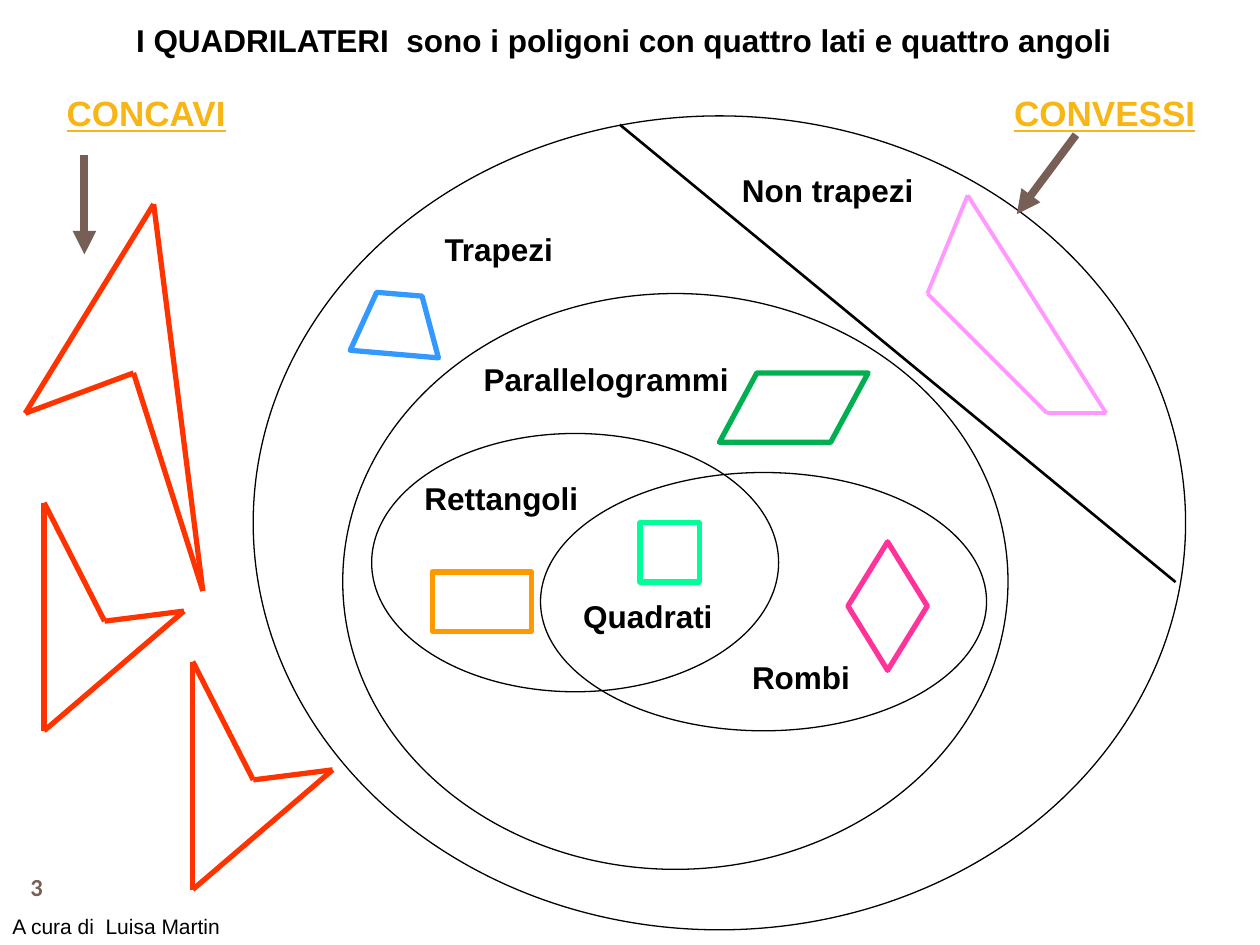
from itertools import pairwise

from lxml.etree import SubElement
from pptx import Presentation
from pptx.dml.color import RGBColor
from pptx.enum.shapes import MSO_CONNECTOR, MSO_SHAPE
from pptx.enum.text import MSO_ANCHOR, MSO_AUTO_SIZE, PP_ALIGN
from pptx.oxml.ns import qn
from pptx.util import Inches, Pt

COLORS = {
    "black": "000000", "gold": "F7B615", "brown": "775F55", "red": "FF3300",
    "lilac": "FF99FF", "pink": "FF3399", "orange": "FF9900", "mint": "00FF99",
    "green": "00B050", "blue": "3399FF",
}

# Lengths are inches; boxes are left, top, width, height.
TITLE = ("I QUADRILATERI  sono i poligoni con quattro lati e quattro angoli",
         (0.98, 0.12, 8.11, 0.4))

HEADING = {"size": Pt(20), "bold": True, "underline": True, "name": "Arial"}
LABEL = {"size": Pt(18), "bold": True, "name": "Arial"}
CREDIT = {"size": Pt(12), "name": "Arial"}
NUMBER = {"size": Pt(14), "bold": True, "name": "Calibri"}

TEXTS = [
    ("CONCAVI", (0.43, 0.68, 1.57, 0.43), HEADING, "gold"),
    ("CONVESSI", (7.95, 0.68, 1.77, 0.43), HEADING, "gold"),
    ("Non trapezi", (5.79, 1.31, 1.57, 0.4), LABEL, "black"),
    ("Trapezi", (3.43, 1.78, 1.26, 0.4), LABEL, "black"),
    ("Parallelogrammi", (3.74, 2.81, 2.36, 0.4), LABEL, "black"),
    ("Rettangoli", (3.27, 3.75, 1.57, 0.4), LABEL, "black"),
    ("Rombi", (5.87, 5.17, 1.02, 0.4), LABEL, "black"),
    ("Quadrati", (4.53, 4.69, 1.34, 0.4), LABEL, "black"),
    ("A cura di  Luisa Martin", (0, 7.2, 1.89, 0.3), CREDIT, "black"),
]
SLIDE_NUMBER = ("3", (0, 6.83, 0.58, 0.42), NUMBER, "brown")

SETS = [
    (2.01, 0.92, 7.4, 6.46),   # convessi
    (2.72, 2.33, 5.28, 4.57),  # parallelogrammi
    (2.95, 3.44, 3.23, 2.05),  # rettangoli
    (4.29, 3.75, 3.54, 2.05),  # rombi
]
EXAMPLES = [
    (MSO_SHAPE.DIAMOND, (6.73, 4.3, 0.63, 1.02), "pink"),
    (MSO_SHAPE.RECTANGLE, (3.43, 4.54, 0.79, 0.47), "orange"),
    (MSO_SHAPE.RECTANGLE, (5.08, 4.15, 0.47, 0.47), "mint"),
    (MSO_SHAPE.PARALLELOGRAM, (5.71, 2.96, 1.18, 0.55), "green"),
]
PARALLELOGRAM_SLANT = 0.54
TRAPEZOID = [(3.48, 2.84), (3.35, 2.35), (2.99, 2.32), (2.78, 2.78)]

LARGE_DART = [(1.22, 1.62), (0.2, 3.28), (1.06, 2.96), (1.61, 4.69)]
SMALL_DART = [(0, 0), (0.48, 0.94), (1.11, 0.86), (0, 1.81)]
SMALL_DART_ORIGINS = [(0.35, 3.99), (1.53, 5.25)]
KITE = [(8.78, 3.28), (7.68, 1.55), (7.36, 2.33), (8.31, 3.28)]
DIVIDER = [(4.92, 0.99), (9.33, 4.62)]
ARROWS = [[(8.54, 1.07), (8.07, 1.7)], [(0.67, 1.23), (0.67, 2.02)]]


def color(name):
    return RGBColor.from_string(COLORS[name])


def inches(values):
    return [Inches(value) for value in values]


def outline(shape, color_name, width):
    shape.shadow.inherit = False
    shape.fill.background()
    shape.line.color.rgb = color(color_name)
    shape.line.width = Pt(width)


def add_shape(slide, kind, box, color_name, width):
    shape = slide.shapes.add_shape(kind, *inches(box))
    outline(shape, color_name, width)
    return shape


def add_line(slide, start, end, color_name, width, arrow=False):
    line = slide.shapes.add_connector(
        MSO_CONNECTOR.STRAIGHT, *inches(start), *inches(end))
    line.line.color.rgb = color(color_name)
    line.line.width = Pt(width)
    properties = line.line._get_or_add_ln()
    if arrow:
        SubElement(properties, qn("a:tailEnd"), type="triangle")
    SubElement(properties.getparent(), qn("a:effectLst"))


def add_sides(slide, points, color_name, width):
    """Draw a polygon as one separate line per side."""
    for start, end in pairwise(points + points[:1]):
        add_line(slide, start, end, color_name, width)


def write(shape, text, font_format, color_name, align=PP_ALIGN.LEFT,
          anchor=MSO_ANCHOR.TOP, auto_size=MSO_AUTO_SIZE.SHAPE_TO_FIT_TEXT):
    frame = shape.text_frame
    frame.text = text
    frame.word_wrap = True
    frame.auto_size = auto_size
    frame.vertical_anchor = anchor
    paragraph = frame.paragraphs[0]
    paragraph.alignment = align
    font = paragraph.runs[0].font
    for name, value in font_format.items():
        setattr(font, name, value)
    font.color.rgb = color(color_name)


def add_text(slide, text, box, font_format, color_name, **layout):
    shape = slide.shapes.add_textbox(*inches(box))
    write(shape, text, font_format, color_name, **layout)


def main():
    presentation = Presentation()
    presentation.slide_width, presentation.slide_height = inches((10, 7.5))
    slide = presentation.slides.add_slide(presentation.slide_layouts[5])

    text, box = TITLE
    title = slide.shapes.title
    title.left, title.top, title.width, title.height = inches(box)
    write(title, text, LABEL, "black", align=PP_ALIGN.JUSTIFY)

    for box in SETS:
        add_shape(slide, MSO_SHAPE.OVAL, box, "black", 0.75)
    add_line(slide, *DIVIDER, "black", 1.5)

    for kind, box, color_name in EXAMPLES:
        shape = add_shape(slide, kind, box, color_name, 3)
        if kind == MSO_SHAPE.PARALLELOGRAM:
            shape.adjustments[0] = PARALLELOGRAM_SLANT

    corners = [inches(point) for point in TRAPEZOID]
    builder = slide.shapes.build_freeform(*corners[0])
    builder.add_line_segments(corners[1:], close=True)
    outline(builder.convert_to_shape(), "blue", 3)

    add_sides(slide, KITE, "lilac", 2.25)
    add_sides(slide, LARGE_DART, "red", 3)
    for left, top in SMALL_DART_ORIGINS:
        dart = [(left + x, top + y) for x, y in SMALL_DART]
        add_sides(slide, dart, "red", 3)

    for start, end in ARROWS:
        add_line(slide, start, end, "brown", 4.5, arrow=True)

    for entry in TEXTS:
        add_text(slide, *entry)
    add_text(slide, *SLIDE_NUMBER, align=PP_ALIGN.CENTER,
             anchor=MSO_ANCHOR.MIDDLE, auto_size=MSO_AUTO_SIZE.NONE)

    presentation.save("out.pptx")


if __name__ == "__main__":
    main()
